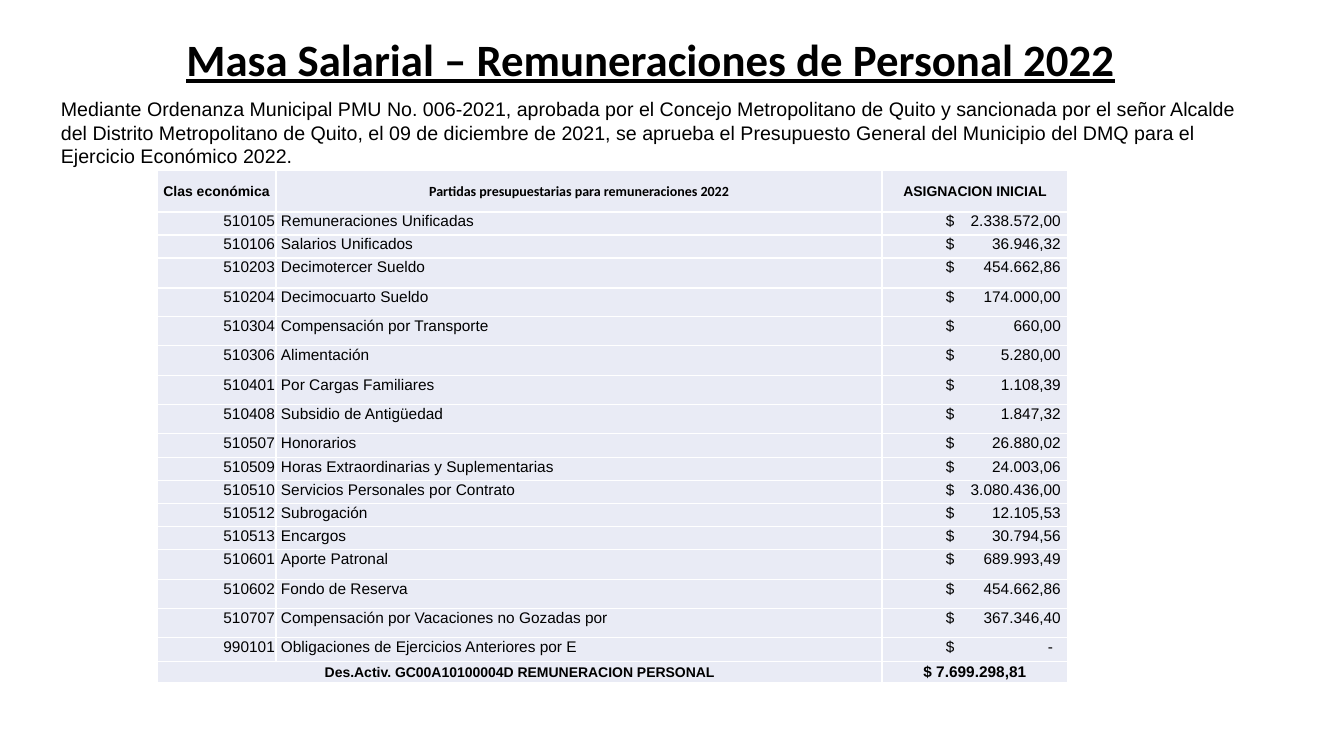
from itertools import pairwise

from lxml import etree
from pptx import Presentation
from pptx.dml.color import RGBColor
from pptx.enum.text import MSO_ANCHOR, PP_ALIGN
from pptx.oxml.ns import qn
from pptx.util import Emu, Pt

LEFT, CENTER, RIGHT = PP_ALIGN.LEFT, PP_ALIGN.CENTER, PP_ALIGN.RIGHT
TOP, MIDDLE, BOTTOM = MSO_ANCHOR.TOP, MSO_ANCHOR.MIDDLE, MSO_ANCHOR.BOTTOM
BLACK = RGBColor(0x00, 0x00, 0x00)
PALE_BLUE = RGBColor(0xE9, 0xEB, 0xF5)
WHITE = RGBColor(0xFF, 0xFF, 0xFF)

# Content
TITLE = "Masa Salarial – Remuneraciones de Personal 2022"
INTRO = (
    "Mediante Ordenanza Municipal PMU No. 006-2021, aprobada por el Concejo "
    "Metropolitano de Quito y sancionada por el señor Alcalde del Distrito "
    "Metropolitano de Quito, el 09 de diciembre de 2021, se aprueba el Presupuesto "
    "General del Municipio del DMQ para el Ejercicio Económico 2022."
)
HEADERS = [
    ("Clas económica", "Arial"),
    ("Partidas presupuestarias para remuneraciones 2022", "Calibri"),
    ("ASIGNACION INICIAL", "Arial"),
]
BUDGET_LINES = [
    ("510105", "Remuneraciones Unificadas", "2.338.572,00"),
    ("510106", "Salarios Unificados", "36.946,32"),
    ("510203", "Decimotercer Sueldo", "454.662,86"),
    ("510204", "Decimocuarto Sueldo", "174.000,00"),
    ("510304", "Compensación por Transporte", "660,00"),
    ("510306", "Alimentación", "5.280,00"),
    ("510401", "Por Cargas Familiares", "1.108,39"),
    ("510408", "Subsidio de Antigüedad", "1.847,32"),
    ("510507", "Honorarios", "26.880,02"),
    ("510509", "Horas Extraordinarias y Suplementarias", "24.003,06"),
    ("510510", "Servicios Personales por Contrato", "3.080.436,00"),
    ("510512", "Subrogación", "12.105,53"),
    ("510513", "Encargos", "30.794,56"),
    ("510601", "Aporte Patronal", "689.993,49"),
    ("510602", "Fondo de Reserva", "454.662,86"),
    ("510707", "Compensación por Vacaciones no Gozadas por", "367.346,40"),
    ("990101", "Obligaciones de Ejercicios Anteriores por E", "-"),
]
TOTAL_LABEL = "Des.Activ. GC00A10100004D REMUNERACION PERSONAL"
TOTAL_AMOUNT = "$ 7.699.298,81"

# Layout in px
COLUMN_EDGES = [157, 276, 882, 1068]
ROW_EDGES = [170, 212, 235, 258, 288, 317, 346, 376, 405, 434,
             458, 481, 504, 527, 550, 580, 609, 638, 662, 683]
NAME_INSET = 5
AMOUNT_INSET = 64
AMOUNT_TAB = 115
DASH_TAB = 107


def px(length):
    return Emu(round(length * 914400 / 100.8))


def write(frame, text, align=LEFT, **font_values):
    para = frame.paragraphs[0]
    para.alignment = align
    span = para.add_run()
    span.text = text
    span.font.color.rgb = BLACK
    for name, value in font_values.items():
        setattr(span.font, name, value)
    return para


def add_text(page, left, top, width, height, anchor):
    frame = page.shapes.add_textbox(px(left), px(top), px(width), px(height)).text_frame
    frame.word_wrap = True
    frame.vertical_anchor = anchor
    return frame


def add_borders(cell):
    properties = cell._tc.get_or_add_tcPr()
    for position, side in enumerate(("lnL", "lnR", "lnT", "lnB")):
        line = etree.Element(qn(f"a:{side}"), w=str(Pt(1)))
        fill = etree.SubElement(line, qn("a:solidFill"))
        etree.SubElement(fill, qn("a:srgbClr"), val=str(WHITE))
        properties.insert(position, line)


def add_right_tab(para, position):
    tabs = etree.SubElement(para._p.get_or_add_pPr(), qn("a:tabLst"))
    etree.SubElement(tabs, qn("a:tab"), pos=str(px(position)), algn="r")


def fill_cell(cell, text, align, anchor, inset=1, name="Arial", size=11, bold=False):
    cell.vertical_anchor = anchor
    cell.margin_left, cell.margin_right = px(inset), px(1)
    cell.margin_top, cell.margin_bottom = px(1), 0
    return write(cell.text_frame, text, align, name=name, size=Pt(size), bold=bold)


def add_budget_table(page):
    left, top = COLUMN_EDGES[0], ROW_EDGES[0]
    table = page.shapes.add_table(
        len(ROW_EDGES) - 1, len(COLUMN_EDGES) - 1, px(left), px(top),
        px(COLUMN_EDGES[-1] - left), px(ROW_EDGES[-1] - top)).table
    table.horz_banding = False
    for column, (start, end) in zip(table.columns, pairwise(COLUMN_EDGES)):
        column.width = px(end - start)
    for row, (start, end) in zip(table.rows, pairwise(ROW_EDGES)):
        row.height = px(end - start)
    for cell in table.iter_cells():
        cell.fill.solid()
        cell.fill.fore_color.rgb = PALE_BLUE
        add_borders(cell)

    # Header row
    for column, (text, font) in enumerate(HEADERS):
        fill_cell(table.cell(0, column), text, CENTER, MIDDLE, name=font, size=10, bold=True)

    # Budget lines, with the amounts on a right tab
    for row, (code, name, amount) in enumerate(BUDGET_LINES, start=1):
        fill_cell(table.cell(row, 0), code, RIGHT, TOP)
        fill_cell(table.cell(row, 1), name, LEFT, TOP, NAME_INSET)
        para = fill_cell(table.cell(row, 2), f"$\t{amount}", LEFT, TOP, AMOUNT_INSET)
        add_right_tab(para, DASH_TAB if amount == "-" else AMOUNT_TAB)

    # Total row
    last = len(ROW_EDGES) - 2
    table.cell(last, 0).merge(table.cell(last, 1))
    fill_cell(table.cell(last, 0), TOTAL_LABEL, CENTER, MIDDLE, size=10, bold=True)
    fill_cell(table.cell(last, 2), TOTAL_AMOUNT, CENTER, MIDDLE, bold=True)


def main():
    deck = Presentation()
    deck.slide_width, deck.slide_height = px(1344), px(756)
    page = deck.slides.add_slide(deck.slide_layouts[6])

    # Title
    title = write(add_text(page, 147, 36, 1008, 55, BOTTOM), TITLE, CENTER,
                  name="Calibri", size=Pt(32), bold=True, underline=True)
    title.line_spacing = 0.9

    add_budget_table(page)

    # Introduction
    write(add_text(page, 51, 92, 1201, 105, TOP), INTRO, name="Arial", size=Pt(14))
    deck.save("out.pptx")


if __name__ == "__main__":
    main()
